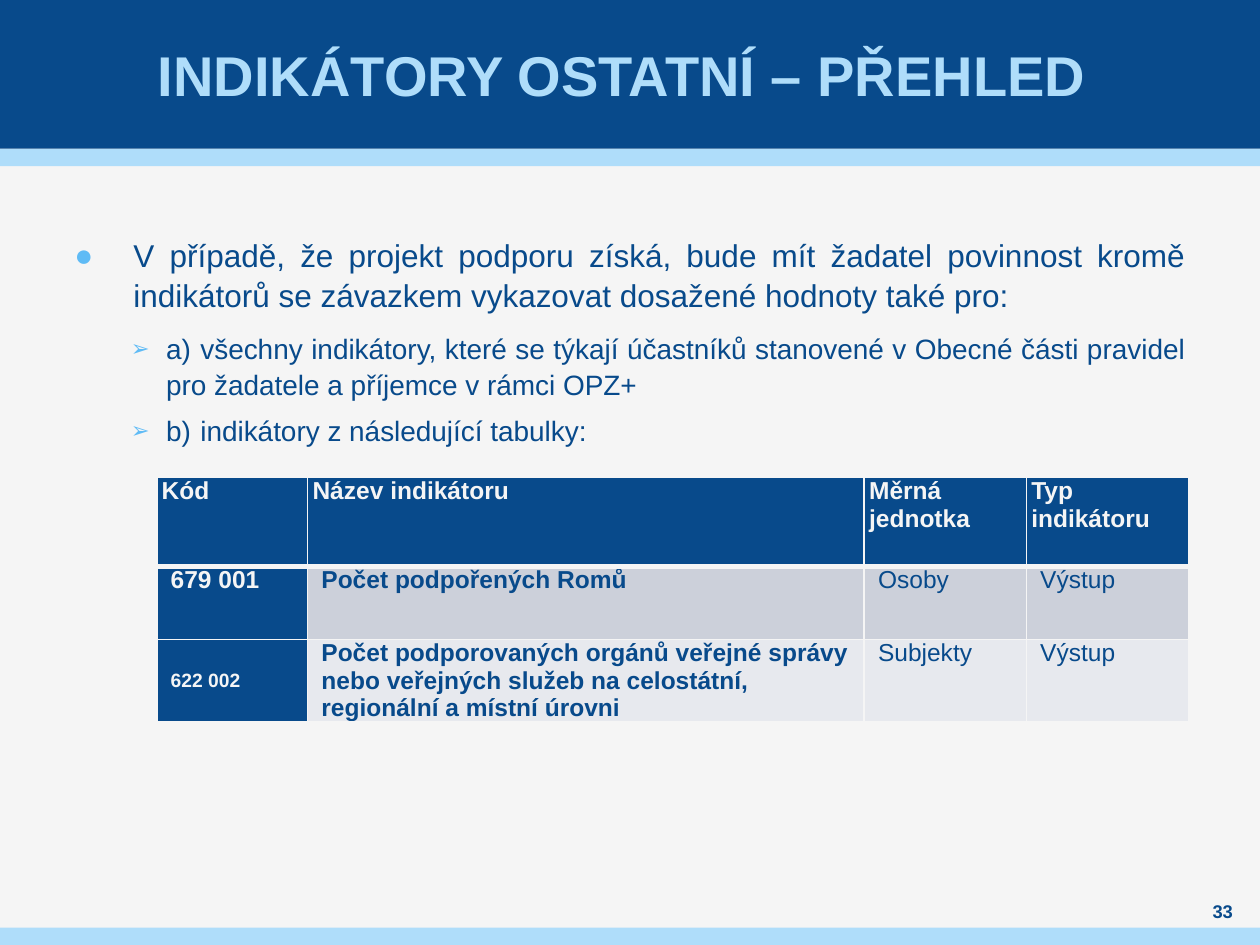
import pptx
import pptx.dml.color
import pptx.enum.shapes
import pptx.enum.text
import pptx.oxml
import pptx.oxml.ns
import pptx.util

Cm, Pt = pptx.util.Cm, pptx.util.Pt
Color = pptx.dml.color.RGBColor
Align = pptx.enum.text.PP_ALIGN
Anchor = pptx.enum.text.MSO_ANCHOR

NAVY = Color(0x08, 0x4A, 0x8B)
SKY = Color(0xAF, 0xDD, 0xFA)
BLUE = Color(0x5F, 0xBB, 0xF5)
PALE = Color(0xF5, 0xF5, 0xF5)
GREY = Color(0xCC, 0xD0, 0xDA)
LIGHT = Color(0xE7, 0xE9, 0xEE)


class Deck:
    face = "Arial"

    def __init__(self, width, height):
        self.prs = pptx.Presentation()
        self.prs.slide_width, self.prs.slide_height = Cm(width), Cm(height)
        self.slide = self.prs.slides.add_slide(self.prs.slide_layouts[5])
        back = self.slide.background.fill
        back.solid()
        back.fore_color.rgb = PALE

    def apply(self, item, values):
        for name, value in values.items():
            setattr(item, name, value)

    def frame(self, frame, side=0, anchor=Anchor.TOP):
        self.apply(frame, {
            "margin_left": Cm(side), "margin_right": Cm(side),
            "margin_top": 0, "margin_bottom": 0, "word_wrap": True,
            "auto_size": pptx.enum.text.MSO_AUTO_SIZE.NONE,
            "vertical_anchor": anchor})

    def label(self, para, text, size, color, bold=False, align=Align.LEFT,
              gap=0, left=0, hang=0):
        run = para.add_run()
        run.text = text
        self.apply(run.font, {"name": self.face, "size": Pt(size), "bold": bold})
        run.font.color.rgb = color
        self.apply(para, {"alignment": align, "space_before": Pt(gap),
                          "space_after": Pt(gap)})
        props = para._p.get_or_add_pPr()
        props.set("marL", str(Cm(left)))
        props.set("indent", str(Cm(-hang)))

    def bullet(self, para, char, scale):
        props = para._p.get_or_add_pPr()
        space = pptx.oxml.ns.nsdecls("a")
        for xml in (f'<a:buClr {space}><a:srgbClr val="{BLUE}"/></a:buClr>',
                    f'<a:buSzPct {space} val="{scale * 1000}"/>',
                    f'<a:buFont {space} typeface="{self.face}"/>',
                    f'<a:buChar {space} char="{char}"/>'):
            props.append(pptx.oxml.parse_xml(xml))

    def bar(self, top, height, color):
        shape = self.slide.shapes.add_shape(
            pptx.enum.shapes.MSO_SHAPE.RECTANGLE,
            0, Cm(top), self.prs.slide_width, Cm(height))
        shape.shadow.inherit = False
        shape.fill.solid()
        shape.fill.fore_color.rgb = color
        shape.line.fill.background()

    def title(self, text, box):
        shape = self.slide.shapes.title
        self.apply(shape, dict(zip(("left", "top", "width", "height"), map(Cm, box))))
        self.frame(shape.text_frame, 0.1, Anchor.MIDDLE)
        self.label(shape.text_frame.paragraphs[0], text, 32, SKY, True, Align.CENTER)
        # Bring the title in front of the bars
        self.slide.shapes._spTree.append(shape._element)

    def box(self, box, anchor=Anchor.TOP):
        frame = self.slide.shapes.add_textbox(*map(Cm, box)).text_frame
        self.frame(frame, 0, anchor)
        return frame

    def items(self, box, rows):
        frame = self.box(box)
        for i, (text, main) in enumerate(rows):
            para = frame.add_paragraph() if i else frame.paragraphs[0]
            para.line_spacing = 1.06
            if main:
                form = {"size": 18, "gap": 6, "left": 1.19, "hang": 1.19}
            else:
                para.level = 1
                form = {"size": 16, "gap": 3, "left": 1.85, "hang": 0.71}
            self.label(para, text, color=NAVY, align=Align.JUSTIFY, **form)
            self.bullet(para, "●" if main else "➢", 100 if main else 80)

    def number(self, text, box):
        frame = self.box(box, Anchor.MIDDLE)
        self.label(frame.paragraphs[0], text, 10.5, NAVY, True, Align.CENTER)

    def edges(self, cell, row):
        props = cell._tc.get_or_add_tcPr()
        space = pptx.oxml.ns.nsdecls("a")
        wide = {"T": 3 if row == 1 else 1, "B": 3 if row == 0 else 1}
        for i, side in enumerate("LRTB"):
            props.insert(i, pptx.oxml.parse_xml(
                f'<a:ln{side} {space} w="{Pt(wide.get(side, 1))}"><a:solidFill>'
                f'<a:srgbClr val="{PALE}"/></a:solidFill></a:ln{side}>'))

    def table(self, left, top, widths, heights, rows):
        table = self.slide.shapes.add_table(
            len(rows), len(widths), Cm(left), Cm(top),
            Cm(sum(widths)), Cm(sum(heights))).table
        for col, width in zip(table.columns, widths):
            col.width = Cm(width)
        for r, (row, height) in enumerate(zip(rows, heights)):
            table.rows[r].height = Cm(height)
            for c, text in enumerate(row):
                cell = table.cell(r, c)
                dark = r == 0 or c == 0
                small = r == 2 and c == 0
                side = Cm(0.18 if r else 0)
                self.apply(cell, {
                    "margin_left": side, "margin_right": side,
                    "margin_top": 0, "margin_bottom": 0,
                    "vertical_anchor": Anchor.MIDDLE if small else Anchor.TOP})
                cell.fill.solid()
                cell.fill.fore_color.rgb = NAVY if dark else (GREY, LIGHT)[r - 1]
                self.edges(cell, r)
                self.label(cell.text_frame.paragraphs[0], text,
                           11 if small else 14, PALE if dark else NAVY,
                           dark or c == 1,
                           Align.JUSTIFY if small else Align.LEFT,
                           2 if small else 3, 0.1)


def main():
    deck = Deck(25.4, 19.05)

    # Header and footer bars
    deck.bar(3, 0.35, SKY)
    deck.bar(0, 3, NAVY)
    deck.bar(18.7, 0.35, SKY)
    deck.title("INDIKÁTORY OSTATNÍ – PŘEHLED ", (1, 0, 23.4, 3))

    # Duties of the applicant
    deck.items((1.5, 4.72, 22.4, 12.2), [
        ("V případě, že projekt podporu získá, bude mít žadatel povinnost kromě "
         "indikátorů se závazkem vykazovat dosažené hodnoty také pro:", True),
        ("a)\tvšechny indikátory, které se týkají účastníků stanovené v Obecné "
         "části pravidel pro žadatele a příjemce v rámci OPZ+ ", False),
        ("b)\tindikátory z následující tabulky:", False)])
    deck.number("33", (24, 18.1, 1.3, 0.52))

    # Indicators
    deck.table(3.16, 9.62, (3.04, 11.22, 3.27, 3.27), (1.8, 1.47, 1.52), [
        ("Kód", "Název indikátoru", "Měrná jednotka", "Typ indikátoru"),
        ("679 001", "Počet podpořených Romů", "Osoby", "Výstup"),
        ("622 002", "Počet podporovaných orgánů veřejné správy nebo veřejných "
         "služeb na celostátní, regionální a místní úrovni", "Subjekty", "Výstup")])

    deck.prs.save("out.pptx")


if __name__ == "__main__":
    main()
